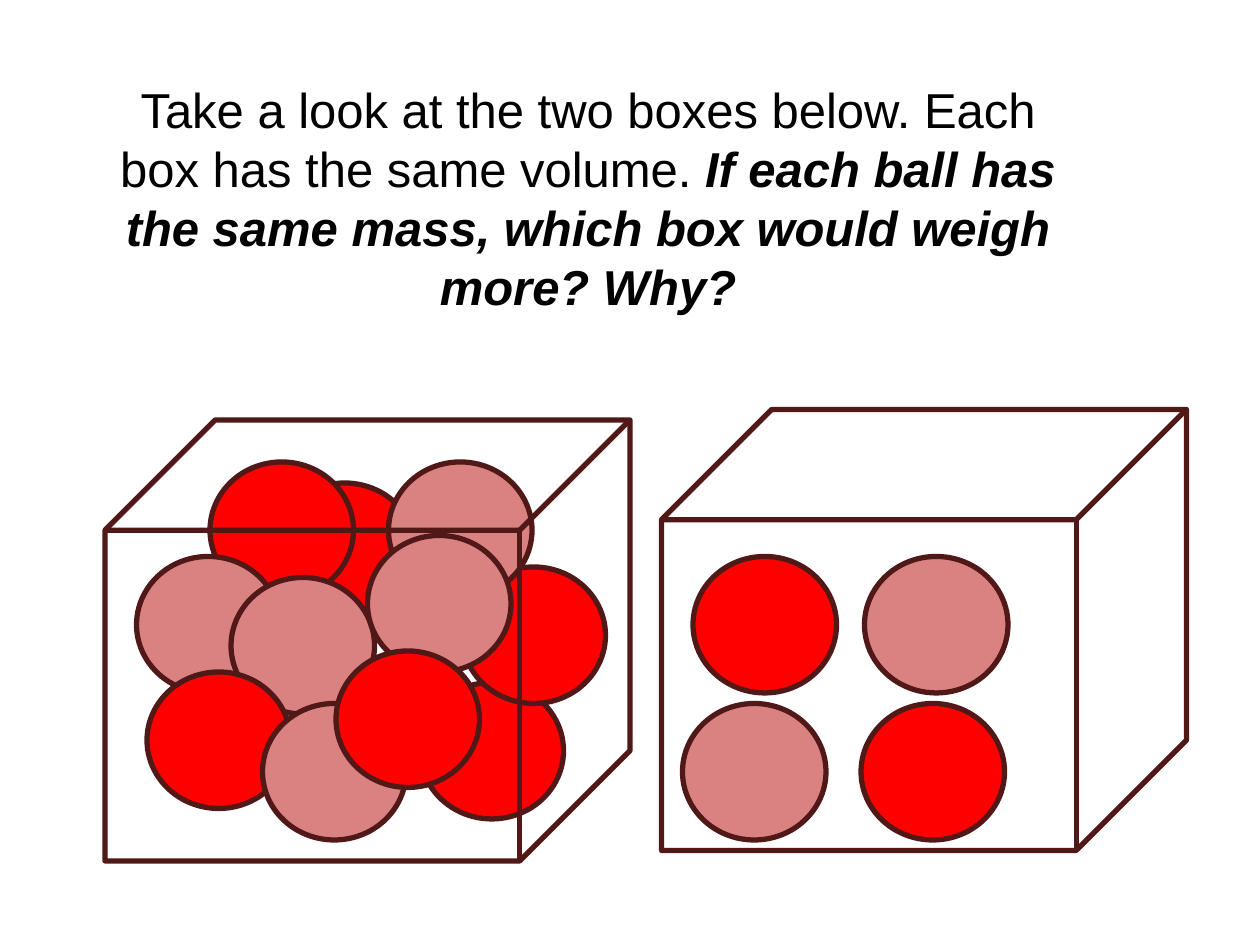
"""Build a slide that compares a full box of balls with a sparse one."""
from dataclasses import dataclass

from pptx import Presentation
from pptx.dml.color import RGBColor as Rgb
from pptx.enum.shapes import MSO_SHAPE as Kind
from pptx.enum.text import MSO_ANCHOR as Anchor, MSO_AUTO_SIZE as Fit, PP_ALIGN as Align
from pptx.shapes.autoshape import Shape
from pptx.slide import Slide
from pptx.util import Pt

RED, PINK, EDGE, INK = "FF0000", "DA8282", "511818", "000000"


@dataclass(frozen=True)
class Ball:
    left: float
    top: float
    fill: str


@dataclass(frozen=True)
class Box:
    left: float
    top: float


BACK = [
    Ball(156, 276, RED),
    Ball(240, 390, RED),
    Ball(264, 324, RED),
    Ball(222, 264, PINK),
    Ball(120, 264, RED),
]
FRONT = [
    Ball(78, 318, PINK),
    Ball(132, 330, PINK),
    Ball(84, 384, RED),
    Ball(150, 402, PINK),
]
SPARSE = [
    Ball(396, 318, RED),
    Ball(494, 318, PINK),
    Ball(390, 402, PINK),
    Ball(492, 402, RED),
]
LAST = [Ball(210, 306, PINK), Ball(192, 372, RED)]


def paint(code: str) -> Rgb:
    """Turn a hex string into a colour."""
    return Rgb.from_string(code)


def edge(shape: Shape) -> None:
    """Give a shape the dark outline and no shadow."""
    shape.shadow.inherit = False
    shape.line.color.rgb = paint(EDGE)
    shape.line.width = Pt(3)


def draw_box(shapes, box: Box) -> None:
    """Draw one clear box."""
    cube = shapes.add_shape(Kind.CUBE, Pt(box.left), Pt(box.top), Pt(300), Pt(252))
    cube.fill.background()
    edge(cube)


def draw_balls(shapes, balls: list[Ball]) -> None:
    """Draw balls from back to front."""
    for ball in balls:
        disc = shapes.add_shape(Kind.OVAL, Pt(ball.left), Pt(ball.top), Pt(82), Pt(78))
        disc.fill.solid()
        disc.fill.fore_color.rgb = paint(ball.fill)
        edge(disc)


def write_title(slide: Slide) -> None:
    """Write the question in the title placeholder."""
    title = slide.shapes.title
    title.left, title.top, title.width, title.height = Pt(54), Pt(42), Pt(564), Pt(143)
    frame = title.text_frame
    frame.word_wrap = True
    frame.auto_size = Fit.NONE
    frame.vertical_anchor = Anchor.TOP
    para = frame.paragraphs[0]
    para.alignment = Align.CENTER
    para.font.name = "Arial"
    para.font.size = Pt(28)
    para.font.color.rgb = paint(INK)
    para.add_run().text = (
        "Take a look at the two boxes below. Each box has the same volume. "
    )
    ask = para.add_run()
    ask.text = "If each ball has the same mass, which box would weigh more? Why?"
    ask.font.bold = ask.font.italic = True


def main() -> None:
    """Build and save the slide."""
    deck = Presentation()
    deck.slide_width, deck.slide_height = Pt(720), Pt(540)
    slide = deck.slides.add_slide(deck.slide_layouts[5])
    write_title(slide)
    draw_box(slide.shapes, Box(378, 234))
    group = slide.shapes.add_group_shape().shapes
    draw_balls(group, BACK)
    draw_box(group, Box(60, 240))
    draw_balls(group, FRONT)
    draw_balls(slide.shapes, SPARSE + LAST)
    deck.save("out.pptx")


if __name__ == "__main__":
    main()
